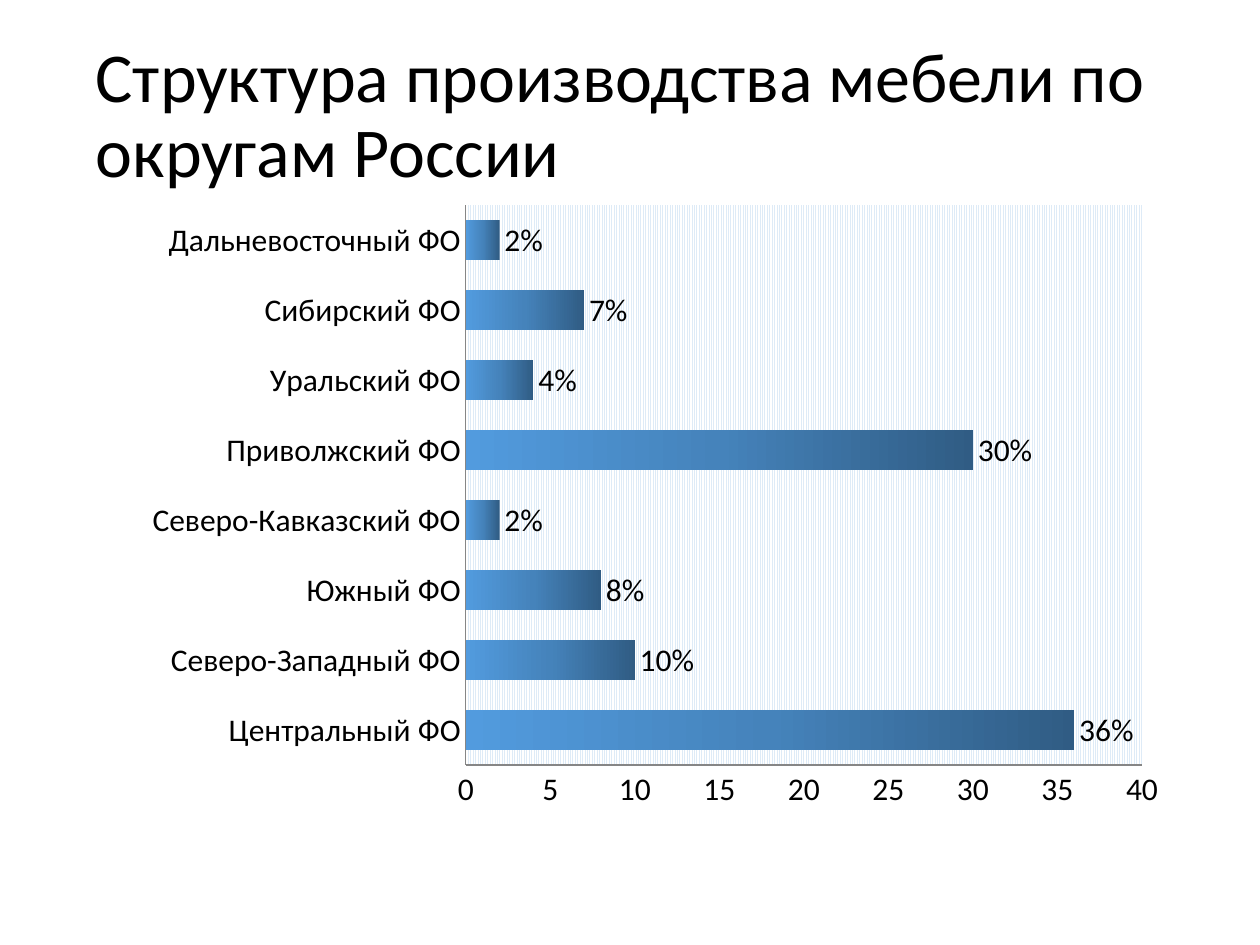
from pptx import Presentation
from pptx.chart.data import CategoryChartData
from pptx.dml.color import RGBColor
from pptx.enum.chart import XL_CHART_TYPE, XL_LABEL_POSITION, XL_TICK_MARK
from pptx.enum.text import MSO_ANCHOR, PP_ALIGN
from pptx.oxml import parse_xml
from pptx.oxml.ns import nsdecls
from pptx.util import Pt

BAR = XL_CHART_TYPE.BAR_CLUSTERED
OUTSIDE = XL_LABEL_POSITION.OUTSIDE_END
NO_TICK = XL_TICK_MARK.NONE
MIDDLE = MSO_ANCHOR.MIDDLE
LEFT = PP_ALIGN.LEFT

FONT = "Calibri"
BLACK = "000000"
GRADE = [(0, "305C84"), (50, "4583BB"), (100, "529BDE")]
SHARES = {
    "Центральный ФО": 36,
    "Северо-Западный ФО": 10,
    "Южный ФО": 8,
    "Северо-Кавказский ФО": 2,
    "Приволжский ФО": 30,
    "Уральский ФО": 4,
    "Сибирский ФО": 7,
    "Дальневосточный ФО": 2,
}


def color(code):
    return RGBColor.from_string(code)


def style(font, size, code=BLACK):
    font.name = FONT
    font.size = Pt(size)
    font.bold = False
    font.color.rgb = color(code)


def write(frame, text, size, code=BLACK, align=LEFT, space=1.0):
    frame.word_wrap = True
    frame.vertical_anchor = MIDDLE
    para = frame.paragraphs[0]
    para.alignment = align
    para.line_spacing = space
    run = para.add_run()
    run.text = text
    style(run.font, size, code)


def add_title(slide, text, box):
    title = slide.shapes.title
    title.left, title.top, title.width, title.height = map(Pt, box)
    write(title.text_frame, text, 40, space=0.9)


def grade_bars(series, stops):
    """Fill the bars with a gradient running from right to left."""
    marks = "".join(
        f'<a:gs pos="{pos * 1000}"><a:srgbClr val="{code}"/></a:gs>'
        for pos, code in stops)
    series.format.fill.background()
    props = series.format.fill._xPr
    props.remove(props[0])
    props.insert(0, parse_xml(
        f'<a:gradFill {nsdecls("a")} rotWithShape="1"><a:gsLst>{marks}</a:gsLst>'
        '<a:lin ang="10800000" scaled="0"/></a:gradFill>'))


def set_plot(chart, x, y, w, h):
    """Place the plot area by shares of the chart and fill it with stripes."""
    area = chart.element.xpath("c:chart/c:plotArea")[0]
    for old in area.xpath("c:layout"):
        area.remove(old)
    sizes = "".join(f'<c:{key} val="{val}"/>'
                    for key, val in zip("xywh", (x, y, w, h)))
    area.insert(0, parse_xml(
        f'<c:layout {nsdecls("c")}><c:manualLayout><c:layoutTarget val="inner"/>'
        f'<c:xMode val="edge"/><c:yMode val="edge"/>{sizes}'
        '</c:manualLayout></c:layout>'))
    area.append(parse_xml(
        f'<c:spPr {nsdecls("c", "a")}><a:pattFill prst="ltVert">'
        '<a:fgClr><a:srgbClr val="DEEBF7"/></a:fgClr>'
        '<a:bgClr><a:srgbClr val="FFFFFF"/></a:bgClr></a:pattFill></c:spPr>'))


def add_bars(slide, shares, box):
    data = CategoryChartData()
    data.categories = list(shares)
    data.add_series("Series 1", list(shares.values()))
    chart = slide.shapes.add_chart(BAR, *map(Pt, box), data).chart
    chart.has_title = chart.has_legend = False
    style(chart.font, 18)

    for axis in (chart.category_axis, chart.value_axis):
        axis.has_major_gridlines = False
        axis.major_tick_mark = axis.minor_tick_mark = NO_TICK
        axis.format.line.color.rgb = color("868686")
        axis.format.line.width = Pt(0.75)
    axis = chart.value_axis
    axis.minimum_scale, axis.maximum_scale, axis.major_unit = 0, 40, 5

    plot = chart.plots[0]
    plot.gap_width = 75
    plot.vary_by_categories = False
    plot.has_data_labels = True
    labels = plot.data_labels
    labels.show_value = True
    labels.number_format = '0"%"'
    labels.number_format_is_linked = False
    labels.position = OUTSIDE
    style(labels.font, 18)

    grade_bars(plot.series[0], GRADE)
    set_plot(chart, 0.34, 0.02, 0.63, 0.89)


def main():
    deck = Presentation()
    deck.slide_width, deck.slide_height = Pt(720), Pt(540)
    slide = deck.slides.add_slide(deck.slide_layouts[5])
    add_title(slide, "Структура производства мебели по округам России",
              (47.5, 14.4, 620.6, 105.1))
    add_bars(slide, SHARES, (57.6, 110.2, 613.4, 359.3))
    deck.save("out.pptx")


if __name__ == "__main__":
    main()
